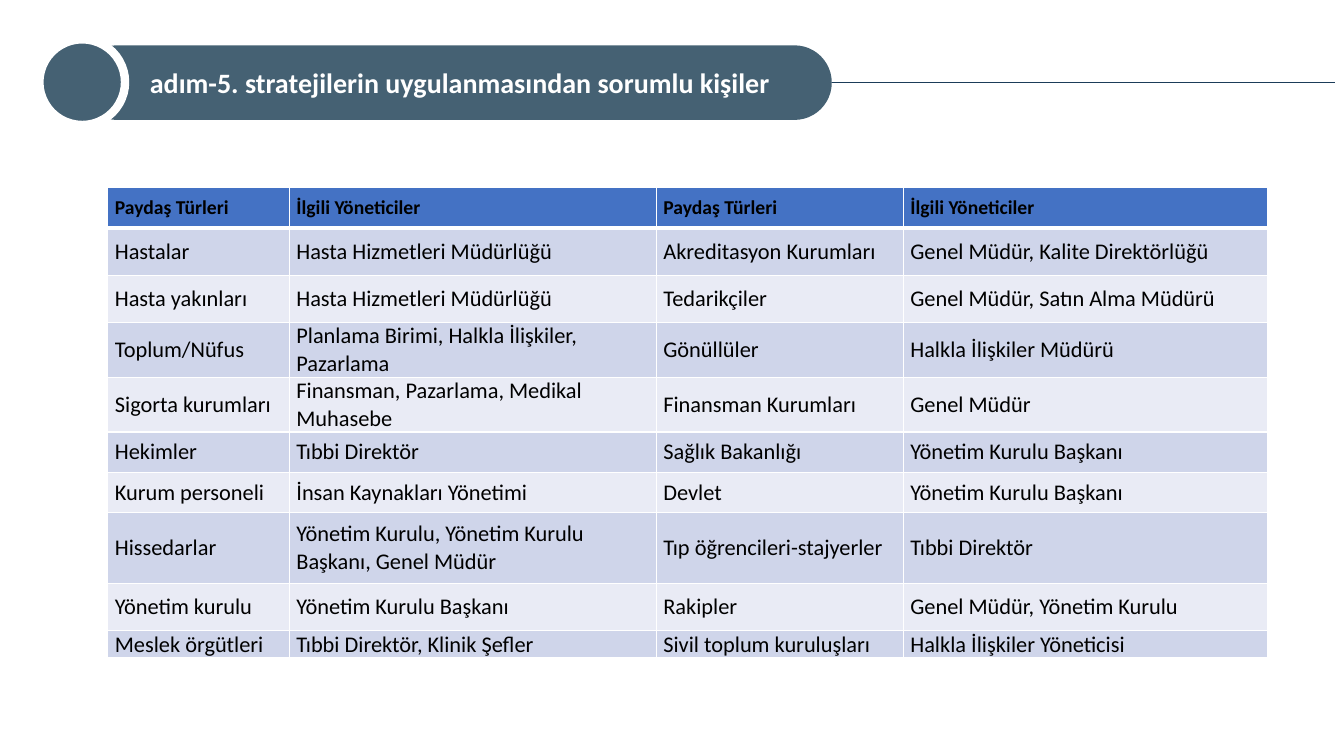
from dataclasses import dataclass

import pptx
import pptx.dml.color
import pptx.enum.shapes
import pptx.enum.text
import pptx.oxml
import pptx.oxml.ns
import pptx.util

Inches = pptx.util.Inches
Pt = pptx.util.Pt
RGBColor = pptx.dml.color.RGBColor
MSO_SHAPE = pptx.enum.shapes.MSO_SHAPE
MIDDLE = pptx.enum.text.MSO_ANCHOR.MIDDLE

SLATE = RGBColor(0x45, 0x61, 0x73)
NAVY = RGBColor(0x1B, 0x3C, 0x59)
BLUE = RGBColor(0x44, 0x72, 0xC4)
BAND_DARK = RGBColor(0xCF, 0xD5, 0xEA)
BAND_LIGHT = RGBColor(0xE9, 0xEB, 0xF5)
WHITE = RGBColor(0xFF, 0xFF, 0xFF)
BLACK = RGBColor(0x00, 0x00, 0x00)
FONT = "Calibri"

COL_WIDTHS = (1.8, 3.64, 2.45, 3.61)


@dataclass
class Row:
    height: float
    cells: tuple[str, str, str, str]


ROWS = [
    Row(0.4, ("Paydaş Türleri", "İlgili Yöneticiler") * 2),
    Row(0.47, ("Hastalar", "Hasta Hizmetleri Müdürlüğü",
               "Akreditasyon Kurumları", "Genel Müdür, Kalite Direktörlüğü")),
    Row(0.47, ("Hasta yakınları", "Hasta Hizmetleri Müdürlüğü",
               "Tedarikçiler", "Genel Müdür, Satın Alma Müdürü")),
    Row(0.47, ("Toplum/Nüfus", "Planlama Birimi, Halkla İlişkiler, Pazarlama",
               "Gönüllüler", "Halkla İlişkiler Müdürü")),
    Row(0.47, ("Sigorta kurumları", "Finansman, Pazarlama, Medikal Muhasebe",
               "Finansman Kurumları", "Genel Müdür")),
    Row(0.4, ("Hekimler", "Tıbbi Direktör",
              "Sağlık Bakanlığı", "Yönetim Kurulu Başkanı")),
    Row(0.4, ("Kurum personeli", "İnsan Kaynakları Yönetimi",
              "Devlet", "Yönetim Kurulu Başkanı")),
    Row(0.7, ("Hissedarlar", "Yönetim Kurulu, Yönetim Kurulu Başkanı, Genel Müdür",
              "Tıp öğrencileri-stajyerler", "Tıbbi Direktör")),
    Row(0.47, ("Yönetim kurulu", "Yönetim Kurulu Başkanı",
               "Rakipler", "Genel Müdür, Yönetim Kurulu")),
    Row(0.23, ("Meslek örgütleri", "Tıbbi Direktör, Klinik Şefler",
               "Sivil toplum kuruluşları", "Halkla İlişkiler Yöneticisi")),
]


def add_run(p, text: str, size: float, color: RGBColor, bold: bool) -> None:
    r = p.add_run()
    r.text = text
    r.font.name = FONT
    r.font.size = Pt(size)
    r.font.bold = bold
    r.font.color.rgb = color


def set_borders(cell, top: float, bottom: float) -> None:
    tc_pr = cell._tc.get_or_add_tcPr()
    for side, width in (("L", 1), ("R", 1), ("T", top), ("B", bottom)):
        tc_pr.append(pptx.oxml.parse_xml(
            f'<a:ln{side} {pptx.oxml.ns.nsdecls("a")} w="{Pt(width)}">'
            f'<a:solidFill><a:srgbClr val="{WHITE}"/></a:solidFill></a:ln{side}>'))


def fill_cell(cell, text: str, row: int) -> None:
    header = row == 0
    cell.vertical_anchor = MIDDLE
    cell.margin_left = cell.margin_right = Inches(0.07)
    cell.margin_top = cell.margin_bottom = 0
    # The heavier rule lies between the header and the first row
    set_borders(cell, top=3 if row == 1 else 1, bottom=3 if header else 1)
    cell.fill.solid()
    cell.fill.fore_color.rgb = BLUE if header else BAND_DARK if row % 2 else BAND_LIGHT
    add_run(cell.text_frame.paragraphs[0], text, 14 if header else 16, BLACK, header)


def add_stakeholders(s) -> None:
    frame = s.shapes.add_table(len(ROWS), len(COL_WIDTHS), Inches(1.07), Inches(1.86),
                               Inches(sum(COL_WIDTHS)), Inches(sum(r.height for r in ROWS)))
    table = frame.table
    for col, width in zip(table.columns, COL_WIDTHS):
        col.width = Inches(width)
    for i, row in enumerate(ROWS):
        table.rows[i].height = Inches(row.height)
        for j, text in enumerate(row.cells):
            fill_cell(table.cell(i, j), text, i)


def add_slate_shape(s, kind: MSO_SHAPE, x: float, y: float, w: float, h: float):
    sp = s.shapes.add_shape(kind, Inches(x), Inches(y), Inches(w), Inches(h))
    sp.shadow.inherit = False
    sp.fill.solid()
    sp.fill.fore_color.rgb = SLATE
    sp.line.fill.background()
    return sp


def add_title(s) -> None:
    # Pill with the title
    pill = add_slate_shape(s, MSO_SHAPE.ROUNDED_RECTANGLE, 0.79, 0.45, 7.46, 0.74)
    pill.adjustments[0] = 0.5
    tf = pill.text_frame
    tf.word_wrap = True
    tf.vertical_anchor = MIDDLE
    p = tf.paragraphs[0]
    p.alignment = pptx.enum.text.PP_ALIGN.LEFT
    p._p.get_or_add_pPr().set("marL", str(Inches(0.49)))
    add_run(p, "adım-5. stratejilerin uygulanmasından sorumlu kişiler", 20, WHITE, True)

    # Circle with a white ring
    circle = add_slate_shape(s, MSO_SHAPE.OVAL, 0.39, 0.39, 0.85, 0.85)
    circle.line.color.rgb = WHITE
    circle.line.width = Pt(6)

    # Rule to the right of the pill
    rule = s.shapes.add_connector(pptx.enum.shapes.MSO_CONNECTOR.STRAIGHT,
                                  Inches(8.25), Inches(0.82), Inches(13.24), Inches(0.82))
    rule.line.color.rgb = NAVY
    rule.line.width = Pt(0.5)
    rule._element.spPr.append(
        pptx.oxml.parse_xml(f'<a:effectLst {pptx.oxml.ns.nsdecls("a")}/>'))


def main() -> None:
    prs = pptx.Presentation()
    prs.slide_width = Inches(13.33)
    prs.slide_height = Inches(7.5)
    s = prs.slides.add_slide(prs.slide_layouts[6])
    add_stakeholders(s)
    add_title(s)
    prs.save("out.pptx")


if __name__ == "__main__":
    main()
